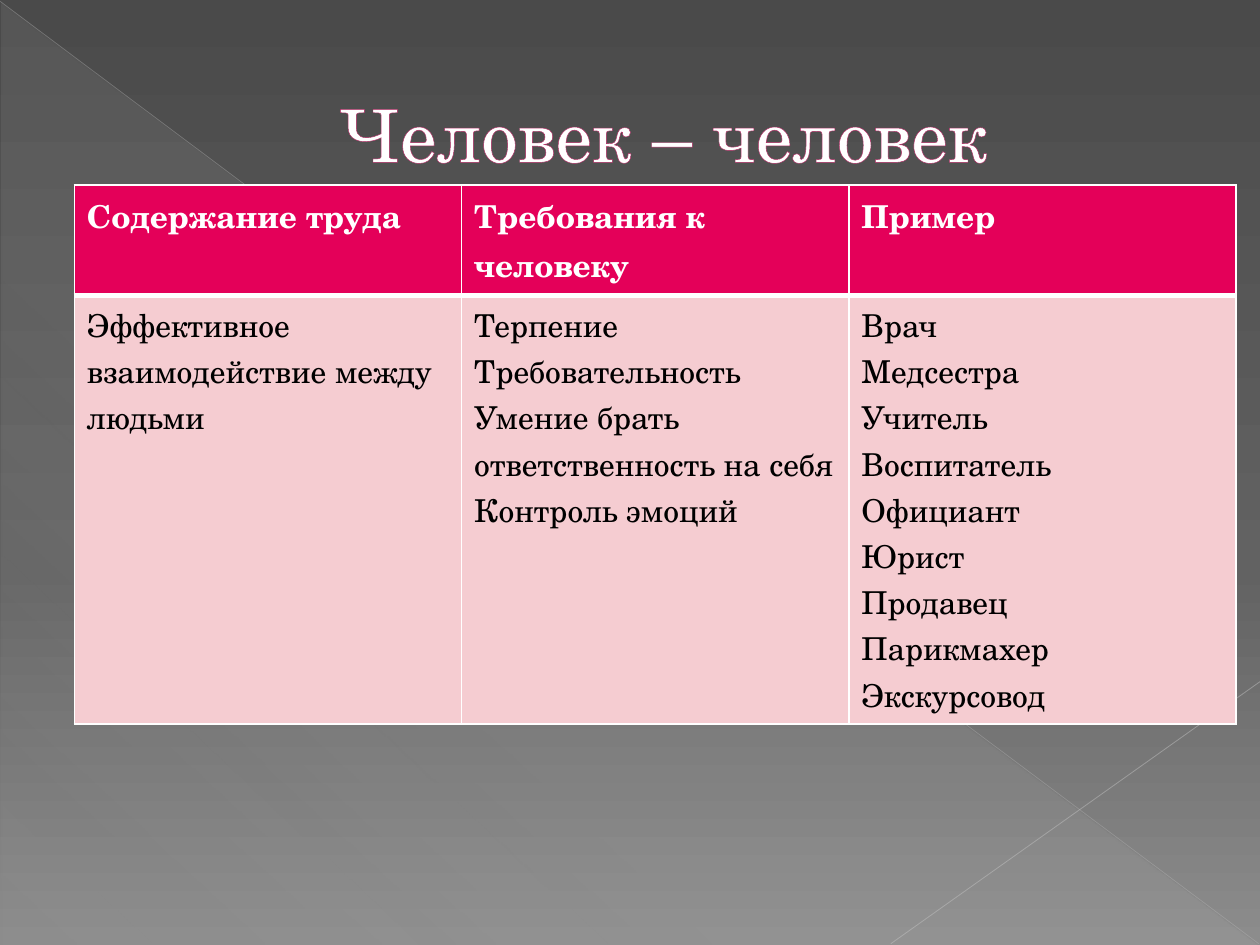
import pptx
import pptx.dml.color
import pptx.enum.shapes
import pptx.enum.text
import pptx.oxml.ns
import pptx.util
from lxml import etree

Inches = pptx.util.Inches
Pt = pptx.util.Pt
RGBColor = pptx.dml.color.RGBColor
qn = pptx.oxml.ns.qn

FONT = "TeX Gyre Schola"
WHITE = RGBColor(0xFF, 0xFF, 0xFF)
BLACK = RGBColor(0x00, 0x00, 0x00)
CRIMSON = RGBColor(0xE4, 0x00, 0x59)
PINK = RGBColor(0xF5, 0xCC, 0xD1)
TITLE_EDGE = RGBColor(0xB1, 0x27, 0x61)
DARK_GREY = RGBColor(0x4A, 0x4A, 0x4A)
MID_GREY = RGBColor(0x62, 0x62, 0x62)
LIGHT_GREY = RGBColor(0x8C, 0x8C, 0x8C)
SHEEN = RGBColor(0xD2, 0xD2, 0xD2)
FALLING_LINE = RGBColor(0xBF, 0xBF, 0xBF)
RISING_LINE = RGBColor(0xC6, 0xC6, 0xC6)


def add_color(parent, color, opacity=100):
    """Append an sRGB colour, with opacity in percent, to an XML element."""
    node = etree.SubElement(parent, qn("a:srgbClr"), val=str(color))
    if opacity < 100:
        etree.SubElement(node, qn("a:alpha"), val=str(opacity * 1000))


def set_gradient(fill, owner, stops, angle):
    """Fill with (position, colour, opacity) stops; angle is clockwise."""
    fill.gradient()
    fill.gradient_angle = 360 - angle
    stop_list = next(owner.iter(qn("a:gsLst")))
    for old_stop in list(stop_list):
        stop_list.remove(old_stop)
    for position, color, opacity in stops:
        stop = etree.SubElement(stop_list, qn("a:gs"), pos=str(position * 1000))
        add_color(stop, color, opacity)


deck = pptx.Presentation()
deck.slide_width = Inches(10)
deck.slide_height = Inches(7.5)
page = deck.slides.add_slide(deck.slide_layouts[5])

# Background and its decoration
set_gradient(page.background.fill, page.element,
             [(0, DARK_GREY, 100), (60, MID_GREY, 100), (100, LIGHT_GREY, 100)], 90)

triangle = page.shapes.add_shape(
    pptx.enum.shapes.MSO_SHAPE.RIGHT_TRIANGLE,
    Inches(0.01), Inches(0.02), Inches(9.98), Inches(7.48))
triangle.shadow.inherit = False
triangle.line.fill.background()
set_gradient(triangle.fill, triangle.element,
             [(0, SHEEN, 10), (70, SHEEN, 8), (100, SHEEN, 1)], 133)

for start, end, color, width, opacity in [
    ((0, 0.01), (9.99, 7.49), FALLING_LINE, 0.39, 35),
    ((10, 5.41), (7.07, 7.49), RISING_LINE, 0.47, 45),
]:
    line = page.shapes.add_connector(
        pptx.enum.shapes.MSO_CONNECTOR.STRAIGHT,
        *[Inches(value) for value in start + end])
    line.line.width = Pt(width)
    line.line.color.rgb = color
    shade = next(line.element.iter(qn("a:srgbClr")))
    etree.SubElement(shade, qn("a:alpha"), val=str(opacity * 1000))
    etree.SubElement(line.element.spPr, qn("a:effectLst"))

# Title, brought in front of the decoration
title = page.shapes.title
page.shapes.element.append(title.element)
title.left, title.top = Inches(0.5), Inches(0.29)
title.width, title.height = Inches(9), Inches(1.53)
title.text_frame.text = "Человек – человек"
title.text_frame.vertical_anchor = pptx.enum.text.MSO_ANCHOR.MIDDLE
para = title.text_frame.paragraphs[0]
para.alignment = pptx.enum.text.PP_ALIGN.CENTER
para_properties = para._p.get_or_add_pPr()
para_properties.set("marL", str(Inches(0.53)))
para_properties.set("indent", "0")
span = para.runs[0]
span.font.name = FONT
span.font.size = Pt(42)
span.font.color.rgb = WHITE
outline = etree.Element(qn("a:ln"), w=str(Pt(0.5)))
add_color(etree.SubElement(outline, qn("a:solidFill")), TITLE_EDGE)
span.font._element.insert(0, outline)

# Table
rows = [
    ["Содержание труда", "Требования к человеку", "Пример"],
    [
        "Эффективное взаимодействие между людьми",
        "Терпение\nТребовательность\nУмение брать ответственность на себя\n"
        "Контроль эмоций",
        "Врач\nМедсестра\nУчитель\nВоспитатель\nОфициант\nЮрист\nПродавец\n"
        "Парикмахер\nЭкскурсовод",
    ],
]
row_heights = [0.87, 3.4]
row_styles = [(CRIMSON, WHITE, True), (PINK, BLACK, False)]
border_widths = [
    {"lnL": 1, "lnR": 1, "lnT": 1, "lnB": 3},
    {"lnL": 1, "lnR": 1, "lnT": 3, "lnB": 1},
]
table = page.shapes.add_table(
    2, 3, Inches(0.59), Inches(1.47), Inches(9.22), Inches(sum(row_heights))).table

for row_index, texts in enumerate(rows):
    table.rows[row_index].height = Inches(row_heights[row_index])
    fill_color, text_color, bold = row_styles[row_index]
    for column_index, text in enumerate(texts):
        cell = table.cell(row_index, column_index)
        cell.text_frame.text = text
        for para in cell.text_frame.paragraphs:
            font = para.runs[0].font
            font.name = FONT
            font.size = Pt(18)
            font.bold = bold
            font.color.rgb = text_color
        cell_properties = cell._tc.get_or_add_tcPr()
        for side, width in border_widths[row_index].items():
            border = etree.SubElement(cell_properties, qn("a:" + side), w=str(Pt(width)))
            add_color(etree.SubElement(border, qn("a:solidFill")), WHITE)
        cell.fill.solid()
        cell.fill.fore_color.rgb = fill_color

deck.save("out.pptx")
